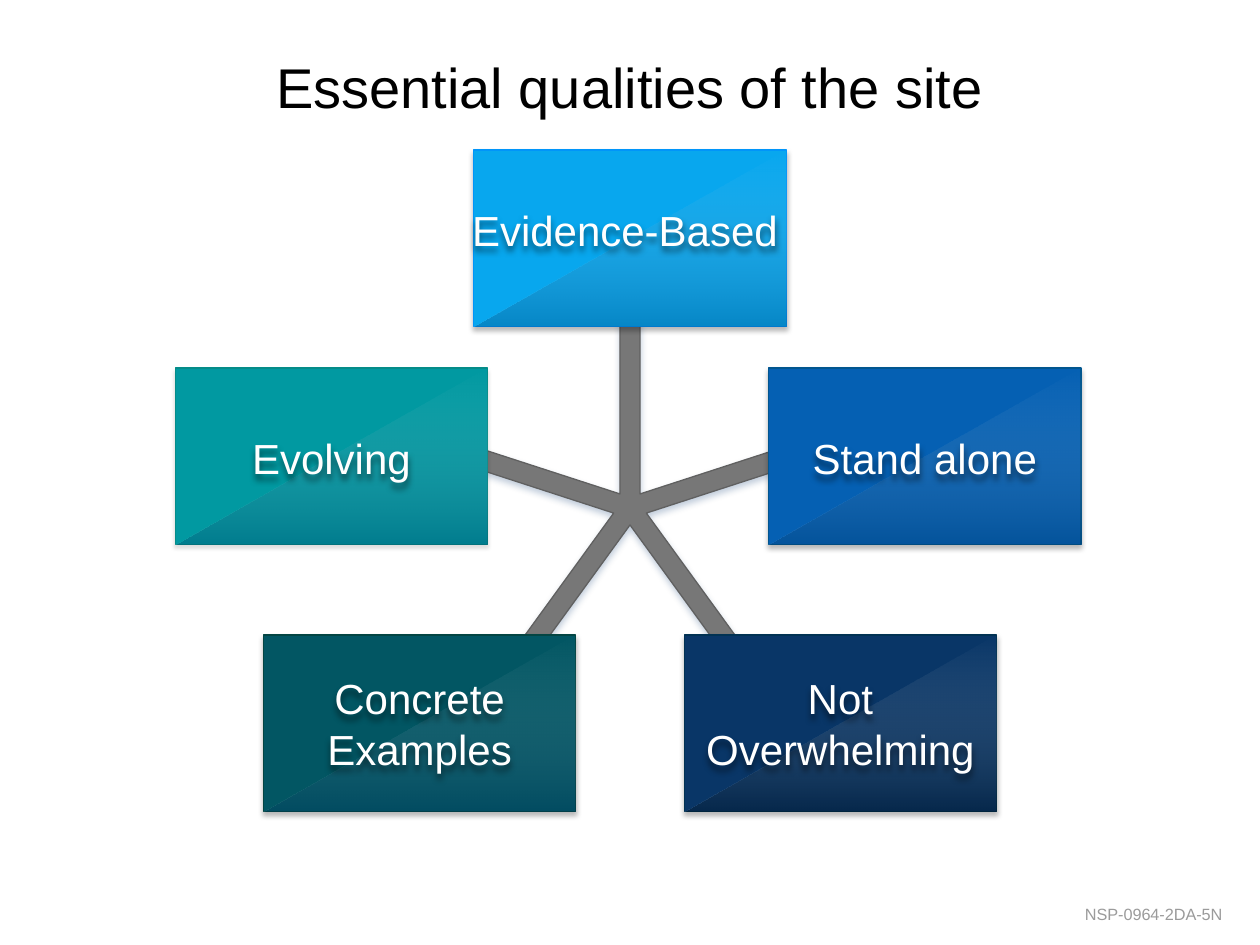
from math import cos, radians, sin

from pptx import Presentation
from pptx.dml.color import RGBColor
from pptx.enum.shapes import MSO_SHAPE
from pptx.enum.text import MSO_ANCHOR, PP_ALIGN
from pptx.oxml.ns import qn
from pptx.util import Inches, Pt
from lxml.etree import SubElement

BLACK = RGBColor(0x00, 0x00, 0x00)
WHITE = RGBColor(0xFF, 0xFF, 0xFF)
FOOTER_GREY = RGBColor(0x9B, 0x9B, 0x9B)
HUB_GREY = RGBColor(0x77, 0x77, 0x77)
HUB_EDGE = RGBColor(0x60, 0x60, 0x60)
HUB_SHADOW = RGBColor(0x1F, 0x49, 0x7D)
GLOSS = RGBColor(0x01, 0x31, 0x5D)
DEEP_GLOSS = RGBColor(0x00, 0x0C, 0x16)
SKY, SKY_EDGE = RGBColor(0x08, 0xA7, 0xEE), RGBColor(0x01, 0x95, 0xF9)
BLUE, BLUE_EDGE = RGBColor(0x05, 0x60, 0xB3), RGBColor(0x01, 0x56, 0x8F)
NAVY, NAVY_EDGE = RGBColor(0x09, 0x36, 0x67), RGBColor(0x01, 0x32, 0x53)
PINE, PINE_EDGE = RGBColor(0x02, 0x56, 0x63), RGBColor(0x03, 0x45, 0x43)
TEAL, TEAL_EDGE = RGBColor(0x01, 0x99, 0xA1), RGBColor(0x04, 0x8C, 0x89)

# The slide is a grid of 100 columns by 75 rows
COLUMNS, ROWS = 100, 75
BOX_WIDTH, BOX_HEIGHT = 24.8, 14


class QualitiesSlide:
    font = "Arial"
    edge_width = Pt(0.75)

    def __init__(self, deck):
        self.slide = deck.slides.add_slide(deck.slide_layouts[6])
        self.column = deck.slide_width / COLUMNS
        self.row = deck.slide_height / ROWS

    def place(self, x, y):
        return round(x * self.column), round(y * self.row)

    def cast_shadow(self, shape, color, opacity, blur, distance):
        shape.shadow.inherit = False
        effects = shape._element.spPr.find(qn("a:effectLst"))
        shadow = SubElement(effects, qn("a:outerShdw"), blurRad=str(Pt(blur)),
                            dist=str(Pt(distance)), dir="5400000", rotWithShape="0")
        tint = SubElement(shadow, qn("a:srgbClr"), val=str(color))
        SubElement(tint, qn("a:alpha"), val=str(opacity * 1000))

    def paint(self, shape, fill, edge):
        shape.fill.solid()
        shape.fill.fore_color.rgb = fill
        shape.line.color.rgb = edge
        shape.line.width = self.edge_width

    def outline(self, shapes, points):
        start, *rest = [self.place(*point) for point in points]
        builder = shapes.build_freeform(*start)
        builder.add_line_segments(rest, close=True)
        return builder.convert_to_shape()

    def text(self, lines, x, y, width, height, size, color, align, anchor, inset=True):
        box = self.slide.shapes.add_textbox(*self.place(x, y), *self.place(width, height))
        frame = box.text_frame
        frame.word_wrap = True
        frame.vertical_anchor = anchor
        if not inset:
            frame.margin_left = frame.margin_right = 0
            frame.margin_top = frame.margin_bottom = 0
        for index, line in enumerate(lines):
            paragraph = frame.add_paragraph() if index else frame.paragraphs[0]
            paragraph.alignment = align
            run = paragraph.add_run()
            run.text = line
            run.font.name = self.font
            run.font.size = Pt(size)
            run.font.color.rgb = color
        return box

    def hub(self, x, y, reach, half_width, arms=5):
        step = radians(360 / arms)
        notch = half_width / sin(step / 2)
        points = []
        for arm in range(arms):
            angle = arm * step
            for side in (-half_width, half_width):
                points.append((x + reach * sin(angle) + side * cos(angle),
                               y - reach * cos(angle) + side * sin(angle)))
            between = angle + step / 2
            points.append((x + notch * sin(between), y - notch * cos(between)))
        star = self.outline(self.slide.shapes, points)
        self.paint(star, HUB_GREY, HUB_EDGE)
        self.cast_shadow(star, HUB_SHADOW, 27, 4, 2)

    def box(self, x, y, fill, edge, gloss, gloss_opacity, shadow):
        shapes = self.slide.shapes.add_group_shape().shapes
        panel = shapes.add_shape(MSO_SHAPE.RECTANGLE, *self.place(x, y),
                                 *self.place(BOX_WIDTH, BOX_HEIGHT))
        self.paint(panel, fill, edge)
        self.cast_shadow(panel, BLACK, *shadow)
        # Glossy lower half, fading upwards
        right, bottom = x + BOX_WIDTH, y + BOX_HEIGHT
        sheen = self.outline(shapes, [(x, bottom), (right, y), (right, bottom)])
        sheen.line.fill.background()
        sheen.shadow.inherit = False
        sheen.fill.gradient()
        sheen.fill.gradient_angle = 90
        stops = sheen.fill.gradient_stops
        for stop, color, position in zip(stops, (gloss, WHITE), (0, 1)):
            stop.color.rgb = color
            stop.position = position
        colors = list(sheen._element.spPr.iter(qn("a:srgbClr")))
        for color, opacity in zip(colors, (gloss_opacity, 0)):
            SubElement(color, qn("a:alpha"), val=str(opacity * 1000))

    def label(self, lines, x, y):
        height = 4.05 * len(lines)
        label = self.text(lines, x, y + (BOX_HEIGHT - height) / 2, BOX_WIDTH, height, 24,
                          WHITE, PP_ALIGN.CENTER, MSO_ANCHOR.MIDDLE, inset=False)
        self.cast_shadow(label, BLACK, 50, 4, 3)


SOFT, FIRM = (13, 2, 2), (27, 3, 2)
# Lines, box corner, label shift, fill, edge, gloss, gloss opacity, shadow
QUALITIES = [
    (["Evolving"], (13.9, 29.2), (0, 0.1), TEAL, TEAL_EDGE, GLOSS, 28, SOFT),
    (["Stand alone"], (61, 29.2), (0, 0.1), BLUE, BLUE_EDGE, GLOSS, 28, FIRM),
    (["Not", "Overwhelming"], (54.3, 50.4), (0, 0), NAVY, NAVY_EDGE, DEEP_GLOSS, 35, FIRM),
    (["Concrete", "Examples"], (20.9, 50.4), (0, 0), PINE, PINE_EDGE, GLOSS, 28, FIRM),
    (["Evidence-Based"], (37.6, 11.9), (-0.4, -0.7), SKY, SKY_EDGE, GLOSS, 28, FIRM),
]


def main():
    deck = Presentation()
    deck.slide_width, deck.slide_height = Inches(10), Inches(7.5)
    page = QualitiesSlide(deck)

    # Title and reference number
    page.text(["Essential qualities of the site"], 2.5, 0, 95, 10, 32, BLACK,
              PP_ALIGN.CENTER, MSO_ANCHOR.BOTTOM)
    page.text(["NSP-0964-2DA-5N"], 2.5, 71.5, 95.5, 2.3, 9.3, FOOTER_GREY,
              PP_ALIGN.RIGHT, MSO_ANCHOR.BOTTOM)

    # Five-armed hub with a quality at each end
    page.hub(50, 40.3, 21.4, 0.8)
    for lines, (x, y), (shift_x, shift_y), *look in QUALITIES:
        page.box(x, y, *look)
        page.label(lines, x + shift_x, y + shift_y)

    deck.save("out.pptx")


if __name__ == "__main__":
    main()
